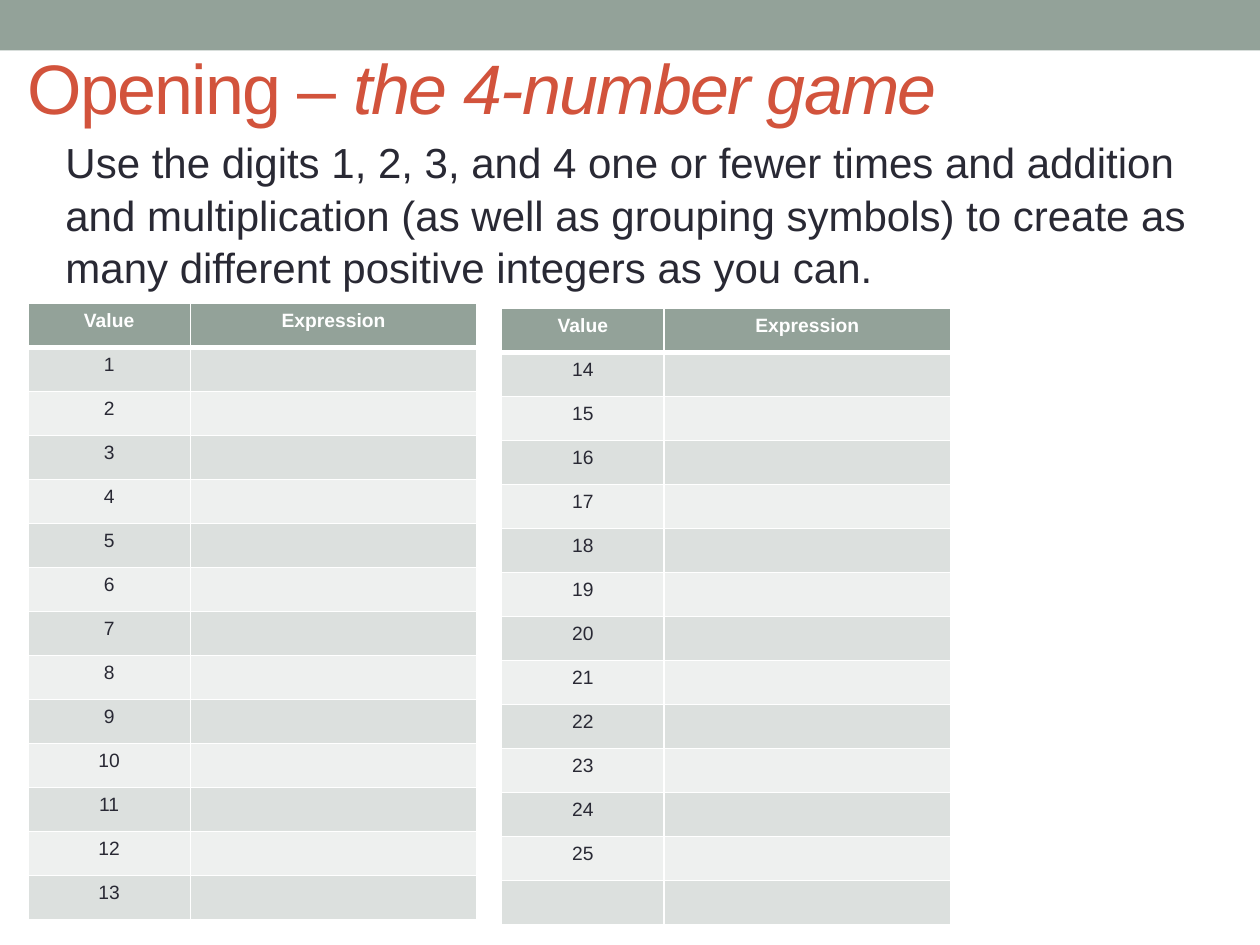
from dataclasses import dataclass

from lxml.etree import SubElement
from pptx import Presentation
from pptx.dml.color import RGBColor
from pptx.enum.shapes import MSO_SHAPE as Shape
from pptx.enum.text import MSO_ANCHOR as Anchor, MSO_AUTO_SIZE as AutoSize, PP_ALIGN as Align
from pptx.oxml.ns import qn
from pptx.util import Cm, Pt


@dataclass(frozen=True)
class Theme:
    font: str = "Arial"
    sage: str = "93A299"
    rust: str = "D2533C"
    ink: str = "292934"
    white: str = "FFFFFF"
    bands: tuple = ("DCE0DE", "EEF0EF")
    title_size: int = 40
    body_size: int = 24
    cell_size: int = 11
    thin: int = 1
    thick: int = 3


THEME = Theme()
TITLE = [("Opening – ", False), ("the 4-number game", True)]
INSTRUCTIONS = (
    "Use the digits 1, 2, 3, and 4 one or fewer times and addition and multiplication "
    "(as well as grouping symbols) to create as many different positive integers as you can."
)
HEADERS = ("Value", "Expression")
VALUE_TABLES = [
    {"left": 0.56, "top": 6.12, "values": [*range(1, 14)]},
    {"left": 10.11, "top": 6.22, "values": [*range(14, 26), ""]},
]
COLUMN_WIDTHS = (3.28, 5.77)
TABLE_HEIGHT = 12.42


def write(paragraph, text, size, color, bold=False, italic=False, align=Align.LEFT, tracking=0):
    paragraph.alignment = align
    if not text:
        SubElement(paragraph._p, qn("a:endParaRPr"), sz=str(size * 100))
        return
    run = paragraph.add_run()
    run.text = text
    font = run.font
    font.name, font.size, font.bold, font.italic = THEME.font, Pt(size), bold, italic
    font.color.rgb = RGBColor.from_string(color)
    if tracking:
        font._element.set("spc", str(tracking * 100))


def paint(fill, color):
    fill.solid()
    fill.fore_color.rgb = RGBColor.from_string(color)


def add_borders(cell, top, bottom):
    properties = cell._tc.get_or_add_tcPr()
    widths = {"lnL": THEME.thin, "lnR": THEME.thin, "lnT": top, "lnB": bottom}
    for side, width in widths.items():
        line = SubElement(properties, qn(f"a:{side}"), w=str(Pt(width)))
        solid = SubElement(line, qn("a:solidFill"))
        SubElement(solid, qn("a:srgbClr"), val=THEME.white)


def add_value_table(slide, left, top, values):
    rows = [HEADERS, *((str(value), "") for value in values)]
    table = slide.shapes.add_table(
        len(rows), len(HEADERS), Cm(left), Cm(top), Cm(sum(COLUMN_WIDTHS)), Cm(TABLE_HEIGHT)
    ).table
    for column, width in zip(table.columns, COLUMN_WIDTHS):
        column.width = Cm(width)
    for row_index, row in enumerate(rows):
        table.rows[row_index].height = Cm(TABLE_HEIGHT / len(rows))
        header = row_index == 0
        background = THEME.sage if header else THEME.bands[(row_index - 1) % 2]
        for column_index, text in enumerate(row):
            cell = table.cell(row_index, column_index)
            add_borders(
                cell,
                top=THEME.thick if row_index == 1 else THEME.thin,
                bottom=THEME.thick if header else THEME.thin,
            )
            paint(cell.fill, background)
            write(cell.text_frame.paragraphs[0], text, THEME.cell_size,
                  THEME.white if header else THEME.ink, bold=header, align=Align.CENTER)


def main():
    """Build the 4-number game slide."""
    deck = Presentation()
    deck.slide_width, deck.slide_height = Cm(25.4), Cm(19.05)
    slide = deck.slides.add_slide(deck.slide_layouts[5])

    top_band = slide.shapes.add_shape(Shape.RECTANGLE, 0, 0, deck.slide_width, Cm(1.02))
    top_band.shadow.inherit = False
    paint(top_band.fill, THEME.sage)
    top_band.line.fill.background()

    title = slide.shapes.title
    title.left, title.top, title.width, title.height = Cm(0.3), Cm(0.38), Cm(22.86), Cm(2.74)
    heading = title.text_frame
    heading.auto_size, heading.vertical_anchor = AutoSize.NONE, Anchor.MIDDLE
    for text, italic in TITLE:
        write(heading.paragraphs[0], text, THEME.title_size, THEME.rust, italic=italic, tracking=-1)

    instructions = slide.shapes.add_textbox(Cm(1.07), Cm(2.57), Cm(23.27), Cm(3.33)).text_frame
    instructions.word_wrap = True
    instructions.paragraphs[0].line_spacing = 1.05
    write(instructions.paragraphs[0], INSTRUCTIONS, THEME.body_size, THEME.ink)

    for value_table in VALUE_TABLES:
        add_value_table(slide, **value_table)
    deck.save("out.pptx")


if __name__ == "__main__":
    main()
